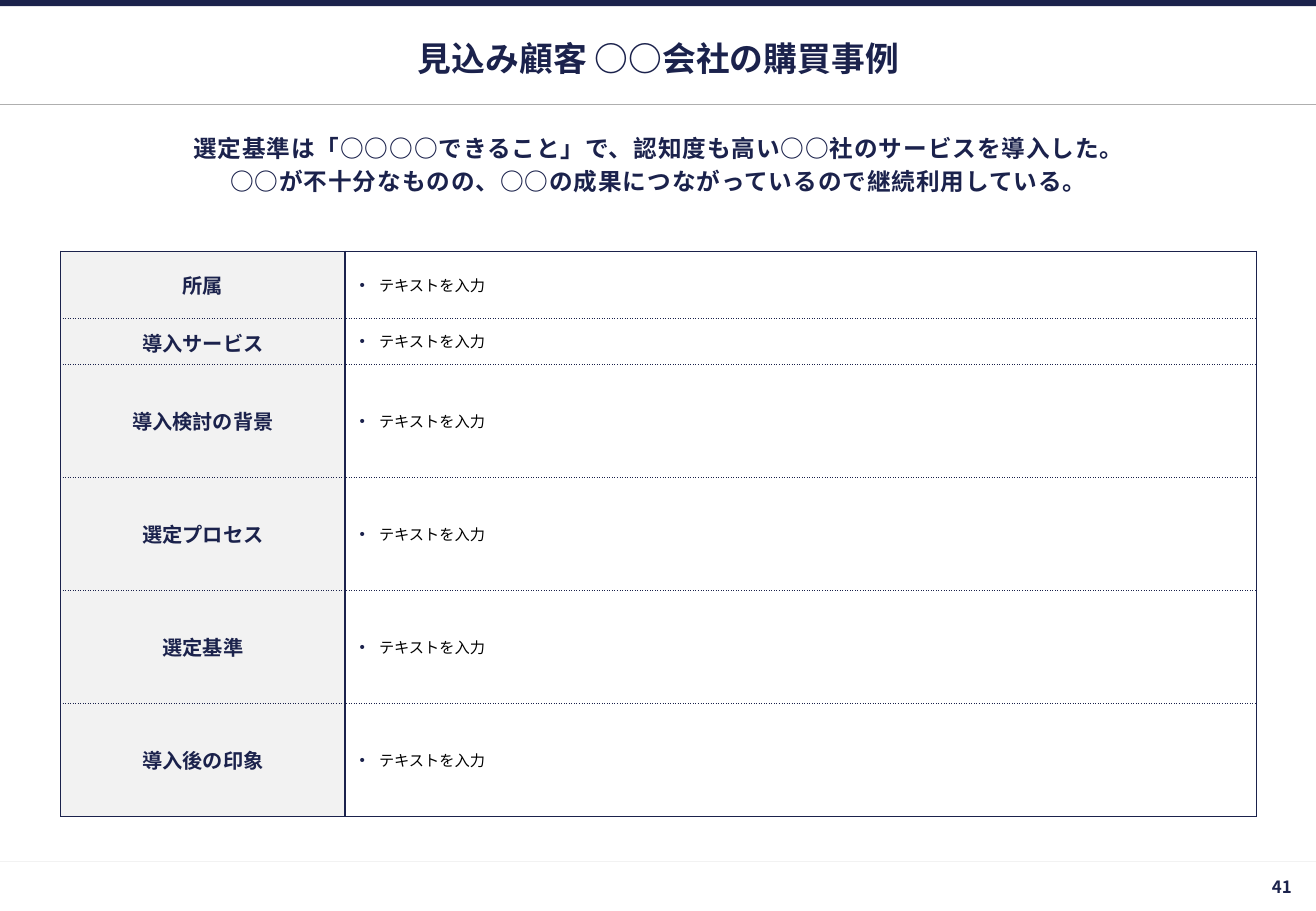
from lxml import etree
from pptx import Presentation
from pptx import util as u
from pptx.dml.color import RGBColor
from pptx.enum import shapes, text
from pptx.oxml.ns import qn

NAVY, GREY, PALE, WHITE, BLACK = "1B224C", "AFAFAF", "F2F2F2", "FFFFFF", "000000"
WIDE, HIGH = 1083, 750
MID = text.MSO_ANCHOR.MIDDLE
CENTER, RIGHT = text.PP_ALIGN.CENTER, text.PP_ALIGN.RIGHT


def px(n):
    """Turn px, 100 to the inch, into EMU."""
    return u.Emu(n * 9144)


def rgb(code):
    return RGBColor.from_string(code)


def assign(obj, vals):
    for key, val in vals.items():
        setattr(obj, key, val)


def sub(node, tag, **atts):
    return etree.SubElement(node, qn("a:" + tag), atts)


class Page:
    font = "Noto Sans CJK JP"

    def __init__(self, deck):
        self.slide = deck.slides.add_slide(deck.slide_layouts[6])
        self.shapes = self.slide.shapes

    def rule(self, y, color):
        line = self.shapes.add_connector(
            shapes.MSO_CONNECTOR.STRAIGHT, 0, px(y), px(WIDE), px(y))
        line.line.color.rgb = rgb(color)
        line.line.width = u.Pt(0.75)
        sub(line._element.spPr, "effectLst")

    def bar(self, x, y, w, h, color):
        bar = self.shapes.add_shape(
            shapes.MSO_SHAPE.RECTANGLE, px(x), px(y), px(w), px(h))
        bar.shadow.inherit = False
        bar.fill.solid()
        bar.fill.fore_color.rgb = rgb(color)
        bar.line.fill.background()

    def words(self, par, line, size, color=NAVY, bold=True, track=0, **form):
        """Fill a paragraph; form holds its paragraph settings."""
        assign(par, form)
        run = par.add_run()
        run.text = line
        assign(run.font, {"size": u.Pt(size), "bold": bold, "name": self.font})
        run.font.color.rgb = rgb(color)
        props = run._r.get_or_add_rPr()
        if track:
            props.set("spc", str(track))
        sub(props, "ea", typeface=self.font)

    def label(self, x, y, w, h, lines, size, right=4, anchor=MID, **form):
        frame = self.shapes.add_textbox(px(x), px(y), px(w), px(h)).text_frame
        assign(frame, {"word_wrap": True, "vertical_anchor": anchor,
                       "margin_left": px(4), "margin_right": px(right),
                       "margin_top": px(4), "margin_bottom": px(4)})
        for i, line in enumerate(lines):
            par = frame.add_paragraph() if i else frame.paragraphs[0]
            self.words(par, line, size, **form)

    def bullet(self, par):
        props = par._p.get_or_add_pPr()
        for key, val in {"marL": 16, "indent": -16}.items():
            props.set(key, str(int(px(val))))
        sub(sub(props, "buClr"), "srgbClr", val=NAVY)
        sub(props, "buFont", typeface="Arial")
        sub(props, "buChar", char="•")

    def border(self, cell, dashes):
        """Draw the four sides; dashes maps each side to its dash."""
        props = cell._tc.get_or_add_tcPr()
        for side, dash in dashes.items():
            line = sub(props, "ln" + side, w=str(int(u.Pt(1))))
            sub(sub(line, "solidFill"), "srgbClr", val=NAVY)
            sub(line, "prstDash", val=dash)

    def cell(self, cell, fill, side, dashes):
        """Style a cell and return its first paragraph."""
        assign(cell, {"vertical_anchor": MID,
                      "margin_left": px(side), "margin_right": px(side),
                      "margin_top": px(8), "margin_bottom": px(8)})
        self.border(cell, dashes)
        cell.fill.solid()
        cell.fill.fore_color.rgb = rgb(fill)
        return cell.text_frame.paragraphs[0]

    def table(self, x, y, cols, rows, hint):
        """Draw a two-column form; rows holds (heading, height) pairs."""
        high = sum(h for _, h in rows)
        grid = self.shapes.add_table(
            len(rows), len(cols), px(x), px(y), px(sum(cols)), px(high)).table
        assign(grid, {"first_row": False, "horz_banding": False})
        for col, wide in zip(grid.columns, cols):
            col.width = px(wide)
        last = len(rows) - 1
        for i, (head, tall) in enumerate(rows):
            grid.rows[i].height = px(tall)
            dashes = {"L": "solid", "R": "solid",
                      "T": "sysDot" if i else "solid",
                      "B": "sysDot" if i < last else "solid"}
            par = self.cell(grid.cell(i, 0), PALE, 8, dashes)
            self.words(par, head, 12, alignment=CENTER)
            par = self.cell(grid.cell(i, 1), WHITE, 12, dashes)
            self.words(par, hint, 9, BLACK, False, space_after=u.Pt(4))
            self.bullet(par)


def main():
    deck = Presentation()
    assign(deck, {"slide_width": px(WIDE), "slide_height": px(HIGH)})
    page = Page(deck)
    page.rule(709, PALE)
    page.bar(0, 0, WIDE, 5, NAVY)
    page.rule(86, GREY)
    page.label(50, 110, 984, 67, [
        "選定基準は「○○○○できること」で、認知度も高い○○社のサービスを導入した。",
        "○○が不十分なものの、○○の成果につながっているので継続利用している。",
    ], 14, anchor=text.MSO_ANCHOR.TOP, track=50, alignment=CENTER,
        line_spacing=0.82, space_after=u.Pt(6))
    page.label(890, 710, 193, 40, ["41"], 10, right=20, alignment=RIGHT)
    page.label(50, 26, 984, 43, ["見込み顧客 ○○会社の購買事例"], 20,
               alignment=CENTER)
    page.table(50, 207, [234, 750], [
        ("所属", 55), ("導入サービス", 38), ("導入検討の背景", 93),
        ("選定プロセス", 93), ("選定基準", 93), ("導入後の印象", 93),
    ], "テキストを入力")
    deck.save("out.pptx")


if __name__ == "__main__":
    main()
